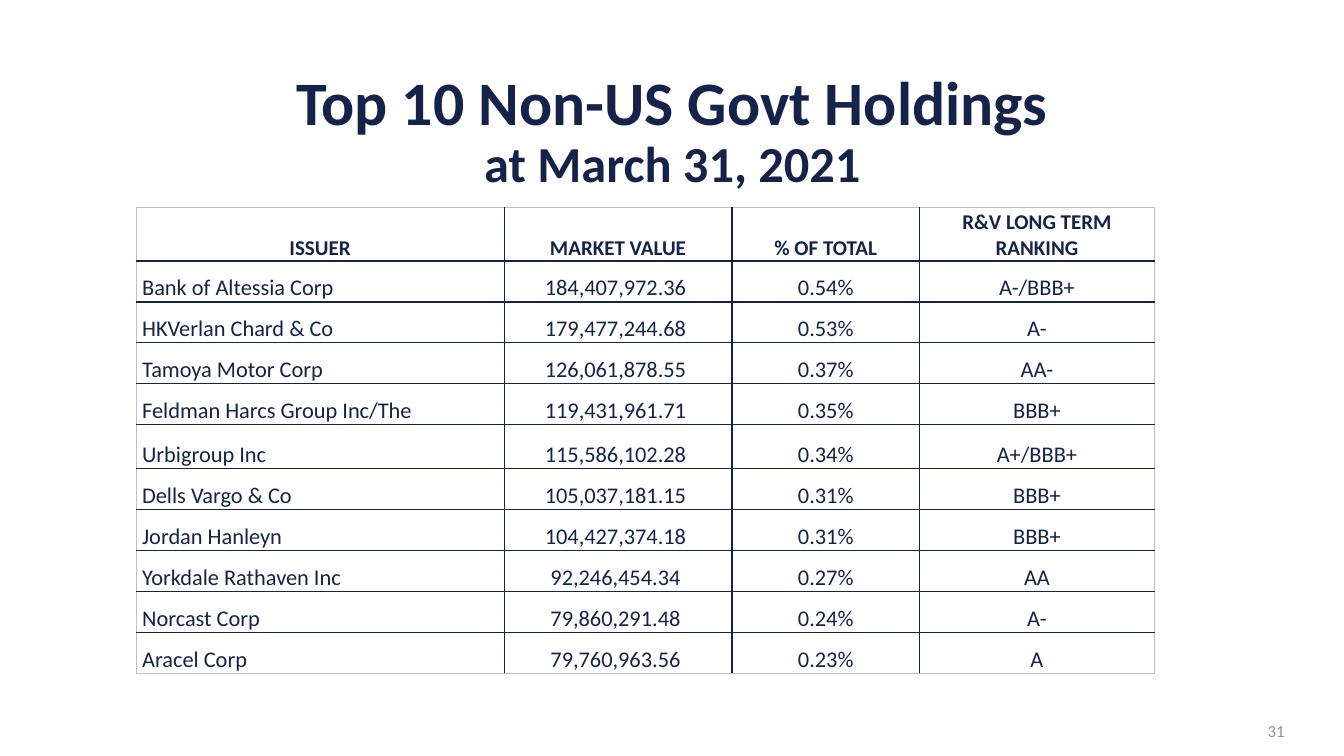
from lxml.etree import SubElement
from pptx import Presentation
from pptx.dml.color import RGBColor
from pptx.enum.text import MSO_ANCHOR, MSO_AUTO_SIZE, PP_ALIGN
from pptx.oxml.ns import qn
from pptx.util import Inches, Pt

HUES = {"navy": "15234A", "edge": "BFBFBF", "grey": "8C8D96"}
FONT = "Calibri"
COLS = (3.65, 2.26, 1.86, 2.33)
HEIGHT, HEAD, TALL = 4.62, 0.53, 0.44
TALL_ROW = 5
PAD, GAP = 0.01, 0.06
ROWS = [
    ("ISSUER", "MARKET VALUE", "% OF TOTAL", "R&V LONG TERM\nRANKING"),
    ("Bank of Altessia Corp", "184,407,972.36", "0.54%", "A-/BBB+"),
    ("HKVerlan Chard & Co", "179,477,244.68", "0.53%", "A-"),
    ("Tamoya Motor Corp", "126,061,878.55", "0.37%", "AA-"),
    ("Feldman Harcs Group Inc/The", "119,431,961.71", "0.35%", "BBB+"),
    ("Urbigroup Inc", "115,586,102.28", "0.34%", "A+/BBB+"),
    ("Dells Vargo & Co", "105,037,181.15", "0.31%", "BBB+"),
    ("Jordan Hanleyn", "104,427,374.18", "0.31%", "BBB+"),
    ("Yorkdale Rathaven Inc", "92,246,454.34", "0.27%", "AA"),
    ("Norcast Corp", "79,860,291.48", "0.24%", "A-"),
    ("Aracel Corp", "79,760,963.56", "0.23%", "A"),
]


def style(para, size, hue="navy", bold=False, align=PP_ALIGN.CENTER):
    para.alignment = align
    for run in para.runs:
        font = run.font
        font.name, font.size, font.bold = FONT, Pt(size), bold
        font.color.rgb = RGBColor.from_string(HUES[hue])


def add_title(slide):
    title = slide.shapes.title
    title.left, title.top = Inches(0.67), Inches(0.3)
    title.width, title.height = Inches(12), Inches(1.65)
    frame = title.text_frame
    frame.text = "Top 10 Non-US Govt Holdings\nat March 31, 2021"
    frame.auto_size = MSO_AUTO_SIZE.NONE
    frame.vertical_anchor = MSO_ANCHOR.TOP
    frame.margin_top, frame.margin_bottom = Inches(0.42), 0
    for para, size in zip(frame.paragraphs, (44.1, 36)):
        style(para, size, bold=True)
        para.line_spacing = 0.9
        para.space_before = Pt(0)


def set_edges(cell, hues):
    """Draw the left, right, top and bottom borders, in that order."""
    props = cell._tc.get_or_add_tcPr()
    for spot, (side, hue) in enumerate(zip("LRTB", hues)):
        line = SubElement(props, qn(f"a:ln{side}"), w=str(Pt(1)))
        fill = SubElement(line, qn("a:solidFill"))
        SubElement(fill, qn("a:srgbClr"), val=HUES[hue])
        props.insert(spot, line)


def fill_cell(cell, text, row, col):
    cell.fill.background()
    cell.vertical_anchor = MSO_ANCHOR.BOTTOM
    issuer, value = row > 0 and col == 0, row > 0 and col == 1
    cell.margin_left = Inches(GAP if issuer else PAD)
    cell.margin_right = Inches(GAP if value else PAD)
    cell.margin_top, cell.margin_bottom = Inches(PAD), 0
    cell.text_frame.text = text
    for para in cell.text_frame.paragraphs:
        style(para, 16 if row else 15, bold=row == 0,
              align=PP_ALIGN.LEFT if issuer else PP_ALIGN.CENTER)
    outer = (col == 0, col == len(COLS) - 1, row == 0, row == len(ROWS) - 1)
    set_edges(cell, ["edge" if rim else "navy" for rim in outer])


def add_grid(slide):
    frame = slide.shapes.add_table(
        len(ROWS), len(COLS), Inches(1.35), Inches(2.06),
        Inches(sum(COLS)), Inches(HEIGHT))
    table = frame.table
    table.first_row = table.horz_banding = False
    for col, width in zip(table.columns, COLS):
        col.width = Inches(width)
    plain = (HEIGHT - HEAD - TALL) / (len(ROWS) - 2)
    special = {0: HEAD, TALL_ROW: TALL}
    for row, texts in enumerate(ROWS):
        table.rows[row].height = Inches(special.get(row, plain))
        for col, text in enumerate(texts):
            fill_cell(table.cell(row, col), text, row, col)


def add_number(slide):
    box = slide.shapes.add_textbox(
        Inches(9.75), Inches(7), Inches(3.09), Inches(0.5))
    frame = box.text_frame
    frame.word_wrap = True
    frame.vertical_anchor = MSO_ANCHOR.MIDDLE
    frame.text = "31"
    style(frame.paragraphs[0], 12, "grey", align=PP_ALIGN.RIGHT)


def main():
    deck = Presentation()
    deck.slide_width, deck.slide_height = Inches(13.33), Inches(7.5)
    slide = deck.slides.add_slide(deck.slide_layouts[5])
    add_title(slide)
    add_number(slide)
    add_grid(slide)
    deck.save("out.pptx")


if __name__ == "__main__":
    main()
